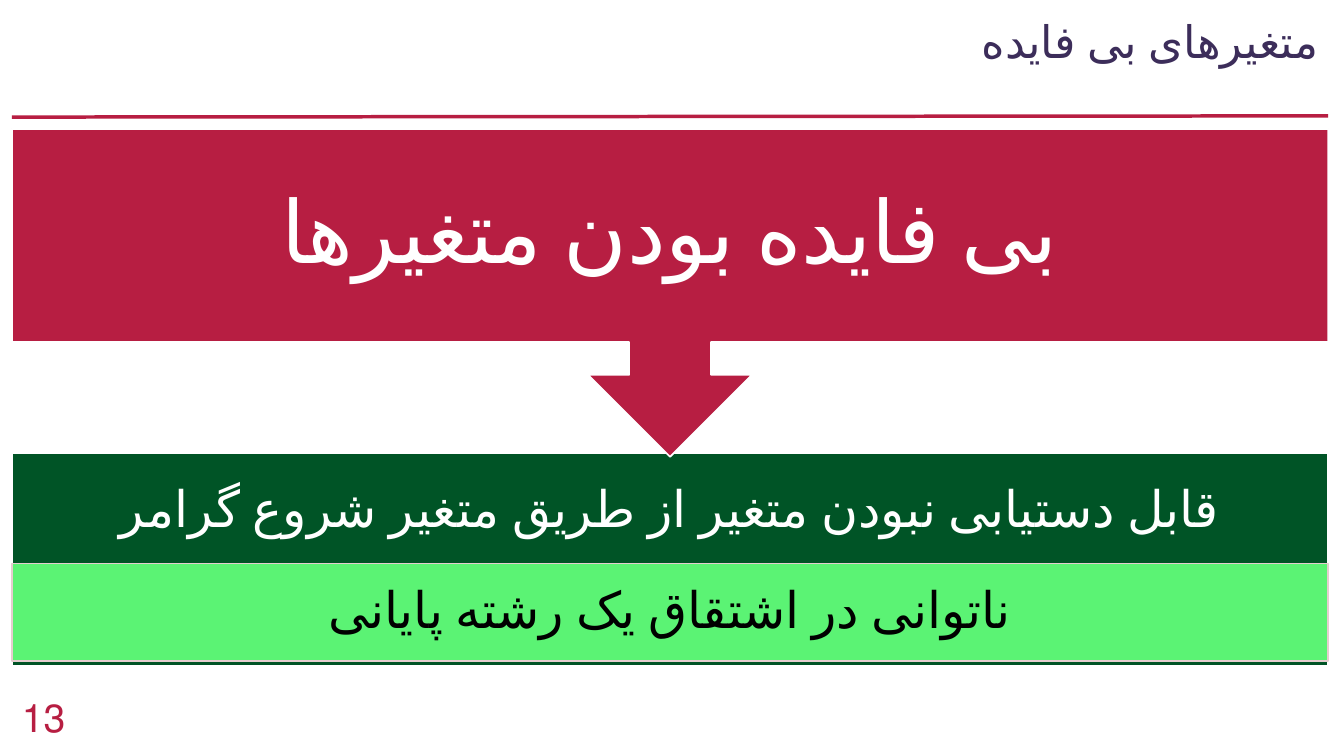
from lxml.etree import SubElement
from pptx import Presentation
from pptx.dml.color import RGBColor
from pptx.enum.shapes import MSO_CONNECTOR, MSO_SHAPE
from pptx.enum.text import MSO_ANCHOR as ANCHOR, PP_ALIGN as ALIGN
from pptx.oxml.ns import qn
from pptx.util import Cm, Pt

COLORS = {
    "red": "B71E42",
    "dark_green": "005426",
    "light_green": "5BF374",
    "pale_pink": "E6CDCF",
    "purple": "3C2D5A",
    "white": "FFFFFF",
    "black": "000000",
}
FONT = "Calibri"
LEFT, WIDTH = 0.3, 33.17


def color(name):
    return RGBColor.from_string(COLORS[name])


def write(shape, text, size, ink, align=ALIGN.CENTER, anchor=ANCHOR.MIDDLE,
          inset_x=0.25, inset_y=0.13, spacing=0.9):
    """Fill a shape with one right-to-left paragraph."""
    frame = shape.text_frame
    frame.word_wrap = True
    frame.vertical_anchor = anchor
    frame.margin_left = frame.margin_right = Cm(inset_x)
    frame.margin_top = frame.margin_bottom = Cm(inset_y)
    frame.text = text
    paragraph = frame.paragraphs[0]
    paragraph.alignment = align
    paragraph.line_spacing = spacing
    paragraph._p.get_or_add_pPr().set("rtl", "1")
    font = paragraph.runs[0].font
    font.name = FONT
    font.size = Pt(size)
    font.color.rgb = color(ink)
    font._element.set("lang", "fa-IR")


def add_text(slide, left, top, width, height, *args, **options):
    box = slide.shapes.add_textbox(Cm(left), Cm(top), Cm(width), Cm(height))
    write(box, *args, **options)


def add_block(slide, kind, top, height, fill, line="white"):
    shape = slide.shapes.add_shape(kind, Cm(LEFT), Cm(top), Cm(WIDTH), Cm(height))
    shape.shadow.inherit = False
    shape.fill.solid()
    shape.fill.fore_color.rgb = color(fill)
    shape.line.color.rgb = color(line)
    shape.line.width = Pt(1.25)
    return shape


def add_rule(slide):
    rule = slide.shapes.add_connector(
        MSO_CONNECTOR.STRAIGHT, Cm(LEFT), Cm(2.95), Cm(LEFT + WIDTH), Cm(2.92))
    rule.line.color.rgb = color("red")
    rule.line.width = Pt(2.5)
    SubElement(rule._element.spPr, qn("a:effectLst"))


def main():
    presentation = Presentation()
    presentation.slide_width, presentation.slide_height = Cm(33.87), Cm(19.05)
    slide = presentation.slides.add_slide(presentation.slide_layouts[6])

    # Heading and page number
    add_rule(slide)
    add_text(slide, 3.63, 0.38, 29.85, 2.31, "متغیرهای بی فایده", 32, "purple",
             align=ALIGN.RIGHT, anchor=ANCHOR.TOP)
    add_text(slide, LEFT, 17.35, 2.26, 1.4, "13", 28, "red",
             align=ALIGN.LEFT, anchor=ANCHOR.TOP, spacing=1.0)

    # Two reasons: dark panel with a light band at its foot
    add_block(slide, MSO_SHAPE.RECTANGLE, 11.43, 5.36, "dark_green")
    add_text(slide, LEFT, 11.43, WIDTH, 2.9,
             "قابل دستیابی نبودن متغیر از طریق متغیر شروع گرامر", 36, "white",
             inset_x=0.71, inset_y=0.71)
    band = add_block(slide, MSO_SHAPE.RECTANGLE, 14.2, 2.46, "light_green", "pale_pink")
    write(band, "ناتوانی در اشتقاق یک رشته پایانی", 36, "black", inset_x=0.71)

    # Callout pointing down to the reasons
    callout = add_block(slide, MSO_SHAPE.UP_ARROW_CALLOUT, 3.25, 8.26, "red")
    callout.rotation = 180
    add_text(slide, LEFT, 3.25, WIDTH, 5.36, "بی فایده بودن متغیرها", 62, "white",
             inset_x=1.22, inset_y=1.22)

    presentation.save("out.pptx")


if __name__ == "__main__":
    main()
